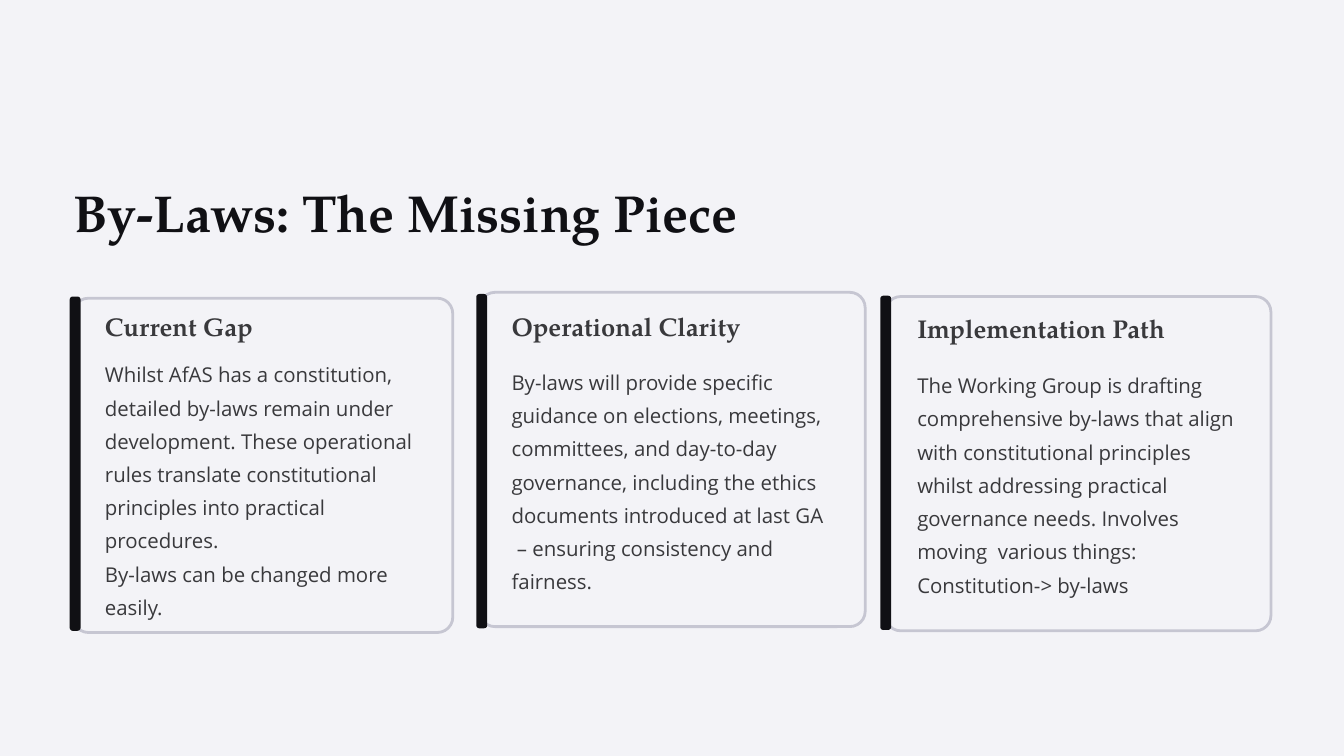
from pptx import Presentation
from pptx.dml.color import RGBColor
from pptx.enum.shapes import MSO_SHAPE
from pptx.enum.text import MSO_ANCHOR, MSO_AUTO_SIZE, PP_ALIGN
from pptx.util import Inches, Pt

ROUNDED = MSO_SHAPE.ROUNDED_RECTANGLE
TOP = MSO_ANCHOR.TOP
LEFT = PP_ALIGN.LEFT
NO_AUTOFIT = MSO_AUTO_SIZE.NONE
TITLE_ONLY_LAYOUT = 5

COLOURS = {"background": "F3F3F7", "border": "C6C6D2", "ink": "101014", "text": "39393C"}

FORMATS = {
    "title": {"font": {"name": "TeX Gyre Pagella", "size": Pt(44.5), "bold": True},
              "colour": "ink", "spacing": 55.5, "wrap": False},
    "heading": {"font": {"name": "TeX Gyre Pagella", "size": Pt(22), "bold": True},
                "colour": "text", "spacing": 27.5, "wrap": False},
    "body": {"font": {"name": "Open Sans", "size": Pt(17.5), "bold": False},
             "colour": "text", "spacing": 28.5, "wrap": True},
}

FRAME = {"margin_left": 0, "margin_right": 0, "margin_top": 0, "margin_bottom": 0,
         "vertical_anchor": TOP, "auto_size": NO_AUTOFIT}

CARD_HEIGHT = 3.98
BAR_WIDTH = 0.13
HEADING_SIZE = (3.1, 0.39)
BODY_WIDTH = 3.93

# Panel: left, top, width. Bar and heading: left, top. Body: top, height.
CARDS = [
    {"panel": (0.87, 3.55, 4.52), "bar": (0.83, 3.53),
     "heading": (1.25, 3.68), "body": (4.21, 2.38), "title": "Current Gap",
     "paragraphs": [
         "Whilst AfAS has a constitution, detailed by-laws remain under development. "
         "These operational rules translate constitutional principles into practical "
         "procedures.",
         "By-laws can be changed more easily."]},
    {"panel": (5.71, 3.48, 4.59), "bar": (5.67, 3.5),
     "heading": (6.09, 3.68), "body": (4.3, 1.98), "title": "Operational Clarity",
     "paragraphs": [
         "By-laws will provide specific guidance on elections, meetings, committees, "
         "and day-to-day governance, including the ethics documents introduced at "
         "last GA",
         " – ensuring consistency and fairness."]},
    {"panel": (10.54, 3.53, 4.59), "bar": (10.48, 3.52),
     "heading": (10.92, 3.71), "body": (4.34, 1.98), "title": "Implementation Path",
     "paragraphs": [
         "The Working Group is drafting comprehensive by-laws that align with "
         "constitutional principles whilst addressing practical governance needs. "
         "Involves moving  various things: Constitution-> by-laws"]},
]


def colour(name):
    return RGBColor.from_string(COLOURS[name])


class SlideBuilder:
    """Holds the text formats and the slide being built."""

    def __init__(self, slide, formats):
        self.slide = slide
        self.formats = formats

    def background(self, name):
        fill = self.slide.background.fill
        fill.solid()
        fill.fore_color.rgb = colour(name)

    def fill_text(self, shape, paragraphs, format_name):
        style = self.formats[format_name]
        frame = shape.text_frame
        for key, value in FRAME.items():
            setattr(frame, key, value)
        frame.word_wrap = style["wrap"]
        frame.text = "\n".join(paragraphs)
        for paragraph in frame.paragraphs:
            paragraph.alignment = LEFT
            paragraph.line_spacing = Pt(style["spacing"])
            paragraph.space_before = Pt(0)
            for key, value in style["font"].items():
                setattr(paragraph.font, key, value)
            paragraph.font.color.rgb = colour(style["colour"])

    def title(self, text, left, top, width, height):
        shape = self.slide.shapes.title
        position = {"left": left, "top": top, "width": width, "height": height}
        for key, value in position.items():
            setattr(shape, key, Inches(value))
        self.fill_text(shape, [text], "title")

    def text(self, paragraphs, format_name, *box):
        shape = self.slide.shapes.add_textbox(*map(Inches, box))
        self.fill_text(shape, paragraphs, format_name)

    def rounded(self, box, corner, fill, border=None):
        shape = self.slide.shapes.add_shape(ROUNDED, *map(Inches, box))
        shape.adjustments[0] = corner
        shape.shadow.inherit = False
        shape.fill.solid()
        shape.fill.fore_color.rgb = colour(fill)
        if border:
            shape.line.color.rgb = colour(border)
            shape.line.width = Pt(2.4)
        else:
            shape.line.fill.background()

    def card(self, card):
        self.rounded((*card["panel"], CARD_HEIGHT), 0.046, "background", "border")
        self.rounded((*card["bar"], BAR_WIDTH, CARD_HEIGHT), 0.279, "ink")
        self.text([card["title"]], "heading", *card["heading"], *HEADING_SIZE)
        body_top, body_height = card["body"]
        self.text(card["paragraphs"], "body",
                  card["heading"][0], body_top, BODY_WIDTH, body_height)


def main():
    presentation = Presentation()
    presentation.slide_width = Inches(16)
    presentation.slide_height = Inches(9)
    layout = presentation.slide_layouts[TITLE_ONLY_LAYOUT]
    builder = SlideBuilder(presentation.slides.add_slide(layout), FORMATS)
    builder.background("background")
    builder.title("By-Laws: The Missing Piece", 0.87, 2.12, 7.95, 0.78)
    for card in CARDS:
        builder.card(card)
    presentation.save("out.pptx")


if __name__ == "__main__":
    main()
